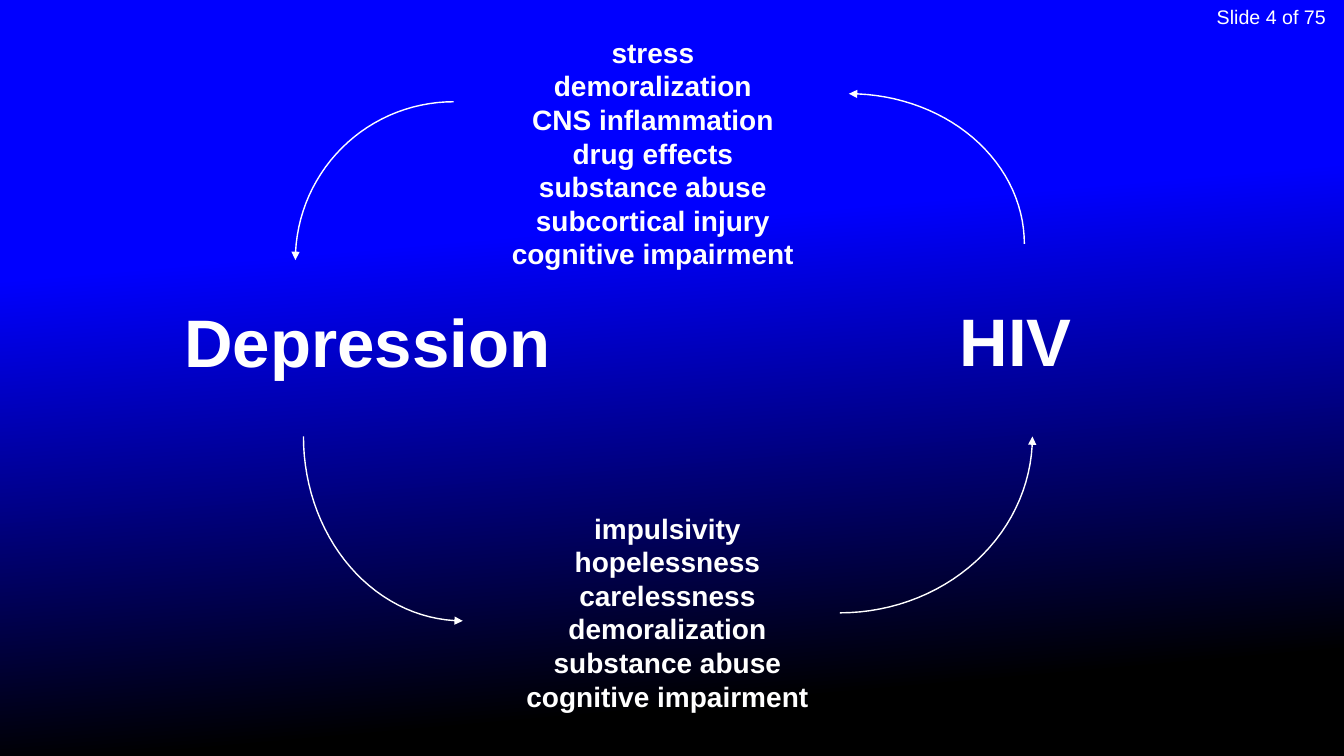
from dataclasses import dataclass
from math import cos, radians, sin

from lxml.etree import SubElement
from pptx import Presentation
from pptx.dml.color import RGBColor
from pptx.enum.text import PP_ALIGN as Align
from pptx.oxml.ns import qn
from pptx.util import Inches, Pt


@dataclass(frozen=True)
class Theme:
    font: str = "Arial"
    ink: RGBColor = RGBColor(0xFF, 0xFF, 0xFF)
    top: RGBColor = RGBColor(0x00, 0x00, 0xFF)
    bottom: RGBColor = RGBColor(0x00, 0x00, 0x00)
    condition: int = 48
    factor: int = 20
    counter: int = 14
    leading: float = 1.2
    arrow_width: int = 1


THEME = Theme()

HIV_TO_DEPRESSION = [
    "stress", "demoralization", "CNS inflammation", "drug effects",
    "substance abuse", "subcortical injury", "cognitive impairment",
]
DEPRESSION_TO_HIV = [
    "impulsivity", "hopelessness", "carelessness",
    "demoralization", "substance abuse", "cognitive impairment",
]
CYCLE_ARROWS = [
    ((4.5, 2.58), (1.57, 1.57), 180),
    ((4.59, 4.33), (1.58, 1.83), 90),
    ((8.33, 4.33), (1.91, 1.75), 0),
    ((8.42, 2.42), (1.74, 1.49), 270),
]


def paint_background(slide):
    fill = slide.background.fill
    fill.gradient()
    fill.gradient_angle = 275
    stops = ((0.32, THEME.top), (0.88, THEME.bottom))
    for stop, (position, color) in zip(fill.gradient_stops, stops):
        stop.position = position
        stop.color.rgb = color


def add_text(slide, lines, box, size, align=Align.LEFT, bold=True, wrap=True):
    frame = slide.shapes.add_textbox(*map(Inches, box)).text_frame
    frame.word_wrap = wrap
    frame.text = "\n".join(lines)
    for paragraph in frame.paragraphs:
        paragraph.alignment = align
        paragraph.line_spacing = Pt(size * THEME.leading)
        font = paragraph.runs[0].font
        font.name = THEME.font
        font.size = Pt(size)
        font.bold = bold
        font.color.rgb = THEME.ink


def add_quarter_arrow(slide, center, radii, tip_angle, steps=30):
    angles = [radians(tip_angle + 90 * step / steps) for step in range(steps + 1)]
    points = [
        (Inches(center[0] + radii[0] * cos(angle)),
         Inches(center[1] + radii[1] * sin(angle)))
        for angle in angles
    ]
    builder = slide.shapes.build_freeform(*points[0])
    builder.add_line_segments(points[1:], close=False)
    arrow = builder.convert_to_shape()
    arrow.shadow.inherit = False
    arrow.fill.background()
    arrow.line.color.rgb = THEME.ink
    arrow.line.width = Pt(THEME.arrow_width)
    outline = arrow.line._get_or_add_ln()
    SubElement(outline, qn("a:round"))
    SubElement(outline, qn("a:headEnd"), type="triangle")


def main():
    deck = Presentation()
    deck.slide_width = Inches(13.33)
    deck.slide_height = Inches(7.5)
    slide = deck.slides.add_slide(deck.slide_layouts[6])
    paint_background(slide)

    add_text(slide, ["Slide 4 of 75"], (11.03, 0, 2.22, 0.34),
             THEME.counter, Align.RIGHT, bold=False)
    add_text(slide, ["Depression"], (1.73, 2.93, 3.87, 0.91),
             THEME.condition, wrap=False)
    add_text(slide, HIV_TO_DEPRESSION, (4.42, 0.3, 4.11, 2.45),
             THEME.factor, Align.CENTER)
    add_text(slide, ["HIV"], (9.42, 2.92, 1.31, 0.9),
             THEME.condition, wrap=False)
    for center, radii, tip_angle in CYCLE_ARROWS:
        add_quarter_arrow(slide, center, radii, tip_angle)
    add_text(slide, DEPRESSION_TO_HIV, (5.11, 5.02, 3.02, 2.12),
             THEME.factor, Align.CENTER, wrap=False)

    deck.save("out.pptx")


if __name__ == "__main__":
    main()
